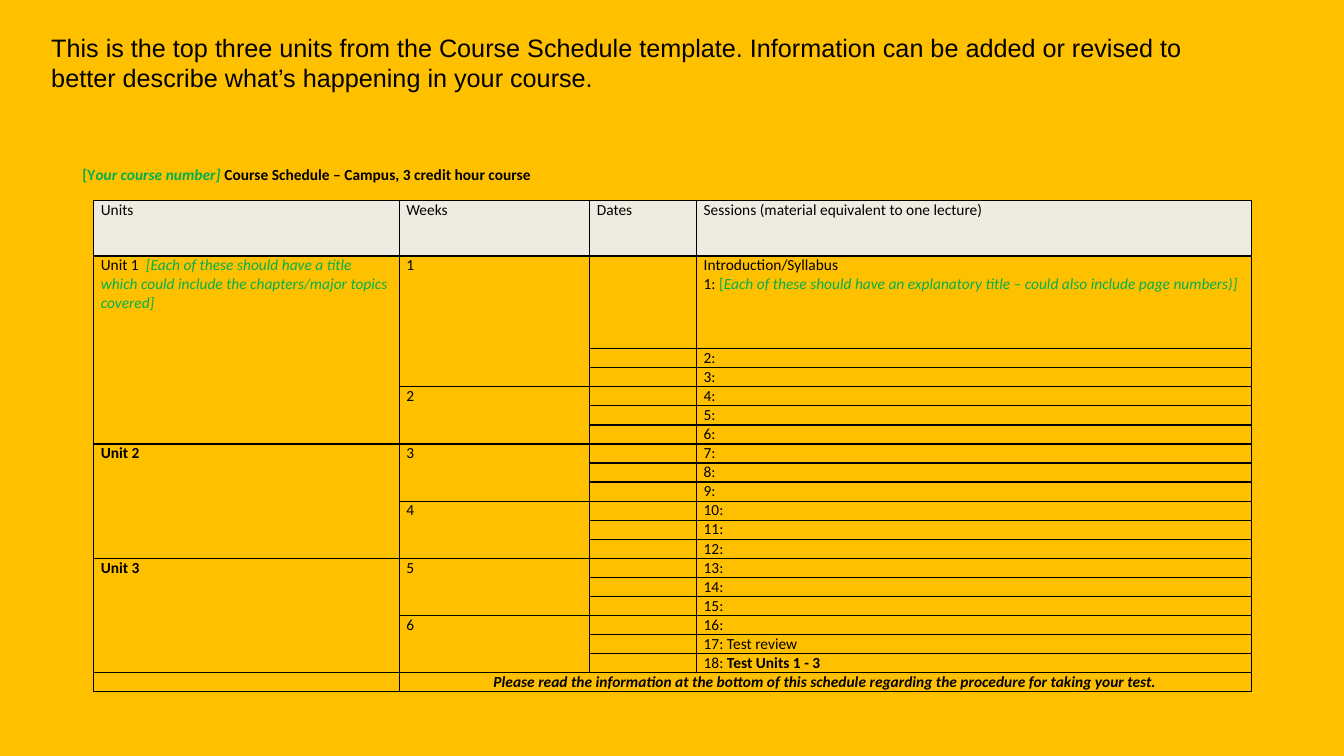
from lxml.etree import SubElement
from pptx import Presentation
from pptx.dml.color import RGBColor
from pptx.enum.text import MSO_ANCHOR as Anchor, PP_ALIGN as Align
from pptx.oxml.ns import qn
from pptx.util import Inches, Pt

BLACK, GREEN, AMBER, CREAM = "000000", "00B050", "FFC000", "EEECE1"
COLUMN_WIDTHS = [3.03, 1.89, 1.06, 5.5]
HEADINGS = ["Units", "Weeks", "Dates", "Sessions (material equivalent to one lecture)"]
HEADER_HEIGHT, INTRO_HEIGHT, SESSION_HEIGHT = 0.55, 0.92, 0.18
SESSIONS, SESSIONS_PER_WEEK, SESSIONS_PER_UNIT = 18, 3, 6
UNIT_HINT = "[Each of these should have a title which could include the chapters/major topics covered]"
SESSION_HINT = "Each of these should have an explanatory title – could also include page numbers)]"
TEST_NOTE = ("Please read the information at the bottom of this schedule "
             "regarding the procedure for taking your test.")
TITLE = ("This is the top three units from the Course Schedule template. Information can be "
         "added or revised to better describe what’s happening in your course.")


def color(value):
    return RGBColor.from_string(value)


def write(para, spans, size=11, name="Calibri"):
    para.font.size, para.font.name = Pt(size), name
    para.font.color.rgb = color(BLACK)
    for text, style in spans:
        span = para.add_run()
        span.text = text
        if "b" in style:
            span.font.bold = True
        if "i" in style:
            span.font.italic = True
        if "g" in style:
            span.font.color.rgb = color(GREEN)
    if not spans:
        SubElement(para._p, qn("a:endParaRPr"), sz=str(size * 100))


def add_text(slide, left, top, width, height, spans, anchor=Anchor.TOP, **font):
    box = slide.shapes.add_textbox(Inches(left), Inches(top), Inches(width), Inches(height))
    frame = box.text_frame
    frame.word_wrap = True
    frame.vertical_anchor = anchor
    write(frame.paragraphs[0], spans, **font)


def format_cell(cell, fill):
    cell.margin_left = cell.margin_right = Inches(0.07)
    cell.margin_top = cell.margin_bottom = 0
    properties = cell._tc.get_or_add_tcPr()
    for side in ("lnL", "lnR", "lnT", "lnB"):
        line = SubElement(properties, qn(f"a:{side}"), w=str(Pt(1)))
        solid = SubElement(line, qn("a:solidFill"))
        SubElement(solid, qn("a:srgbClr"), val=BLACK)
    if fill:
        cell.fill.solid()
        cell.fill.fore_color.rgb = color(fill)
    else:
        cell.fill.background()


def schedule_content():
    content = {(0, column): [[(text, "")]] for column, text in enumerate(HEADINGS)}
    for session in range(1, SESSIONS + 1):
        content[session, 3] = [[(f"{session}:", "")]]
    for week, row in enumerate(range(1, SESSIONS + 1, SESSIONS_PER_WEEK), 1):
        content[row, 1] = [[(str(week), "")]]
    for unit, row in enumerate(range(1, SESSIONS + 1, SESSIONS_PER_UNIT), 1):
        content[row, 0] = [[(f"Unit {unit}", "b")]]
    content[1, 0] = [[("Unit 1  ", ""), (UNIT_HINT, "gi")]]
    content[1, 3] = [[("Introduction/Syllabus", "")],
                     [("1: ", ""), ("[", "g"), (SESSION_HINT, "gi")]]
    content[17, 3] = [[("17: Test review", "")]]
    content[18, 3] = [[("18:", ""), (" Test Units 1 - 3", "b")]]
    content[SESSIONS + 1, 1] = [[(TEST_NOTE, "bi")]]
    return content


def add_schedule(slide, left, top):
    heights = [HEADER_HEIGHT, INTRO_HEIGHT] + [SESSION_HEIGHT] * SESSIONS
    frame = slide.shapes.add_table(len(heights), len(COLUMN_WIDTHS), Inches(left), Inches(top),
                                   Inches(sum(COLUMN_WIDTHS)), Inches(sum(heights)))
    table = frame.table
    table.first_row = table.horz_banding = False
    for column, width in zip(table.columns, COLUMN_WIDTHS):
        column.width = Inches(width)
    content = schedule_content()
    for row, height in enumerate(heights):
        table.rows[row].height = Inches(height)
        for column in range(len(COLUMN_WIDTHS)):
            cell = table.cell(row, column)
            format_cell(cell, CREAM if row == 0 else None)
            for index, spans in enumerate(content.get((row, column), [[]])):
                text = cell.text_frame
                write(text.add_paragraph() if index else text.paragraphs[0], spans)
    for column, step in ((0, SESSIONS_PER_UNIT), (1, SESSIONS_PER_WEEK)):
        for row in range(1, SESSIONS + 1, step):
            table.cell(row, column).merge(table.cell(row + step - 1, column))
    note = table.cell(SESSIONS + 1, 1)
    note.merge(table.cell(SESSIONS + 1, 3))
    note.text_frame.paragraphs[0].alignment = Align.CENTER


def main():
    deck = Presentation()
    deck.slide_width, deck.slide_height = Inches(13.33), Inches(7.5)
    page = deck.slides.add_slide(deck.slide_layouts[6])
    page.background.fill.solid()
    page.background.fill.fore_color.rgb = color(AMBER)
    add_schedule(page, 0.93, 1.99)
    add_text(page, 0.72, 1.48, 12.6, 0.5,
             [("[Y", "gb"), ("our course number] ", "gbi"),
              ("Course Schedule – Campus, 3 credit hour course", "b")], Anchor.MIDDLE)
    add_text(page, 0.41, 0.27, 11.98, 0.71, [(TITLE, "")], size=18, name="Arial")
    deck.save("out.pptx")


if __name__ == "__main__":
    main()
